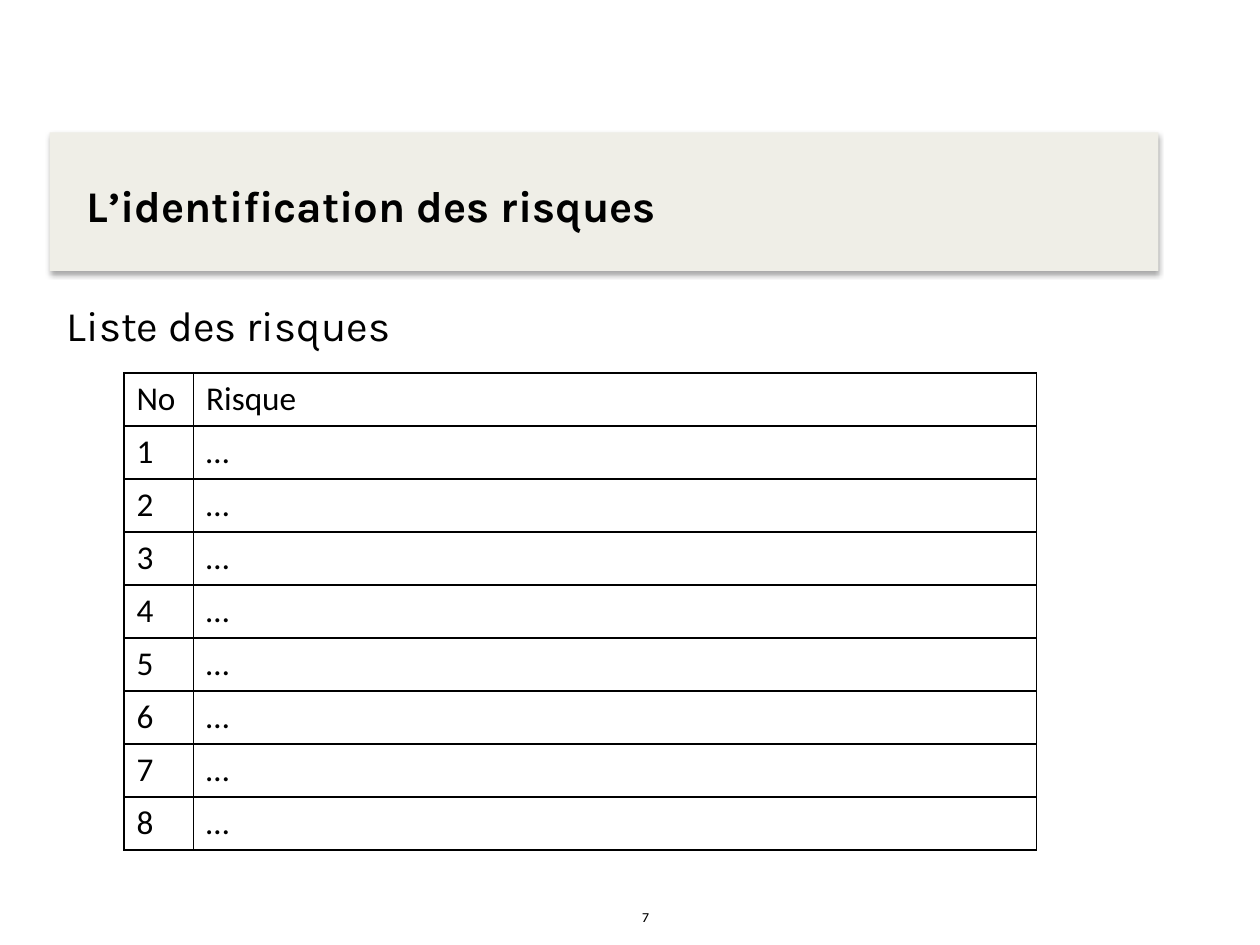
from dataclasses import dataclass

from lxml.etree import SubElement
from pptx import Presentation
from pptx.dml.color import RGBColor
from pptx.enum.shapes import MSO_SHAPE
from pptx.enum.text import MSO_ANCHOR, MSO_AUTO_SIZE, PP_ALIGN
from pptx.oxml import parse_xml
from pptx.oxml.ns import nsdecls, qn
from pptx.util import Pt


@dataclass(frozen=True)
class Theme:
    ink: str = "000000"
    paper: str = "FFFFFF"
    band: str = "EFEEE7"
    text_font: str = "Karla"
    table_font: str = "Calibri"
    title_size: float = 25
    body_size: float = 24
    table_size: float = 19
    number_size: float = 8
    border: float = 1
    hanging: float = 27


class SlideBuilder:
    def __init__(self, page, theme):
        self.page = page
        self.theme = theme

    def style(self, paragraph, font_name, size, bold=False):
        paragraph.alignment = PP_ALIGN.LEFT
        paragraph.space_before = Pt(0)
        for span in paragraph.runs:
            span.font.name = font_name
            span.font.size = Pt(size)
            span.font.bold = bold
            span.font.color.rgb = RGBColor.from_string(self.theme.ink)

    def place(self, shape, left, top, width, height):
        shape.left, shape.top = Pt(left), Pt(top)
        shape.width, shape.height = Pt(width), Pt(height)

    def band(self, left, top, width, height):
        shape = self.page.shapes.add_shape(
            MSO_SHAPE.RECTANGLE, Pt(left), Pt(top), Pt(width), Pt(height))
        shape.fill.solid()
        shape.fill.fore_color.rgb = RGBColor.from_string(self.theme.band)
        shape.line.fill.background()
        shape._element.spPr.append(parse_xml(
            f'<a:effectLst {nsdecls("a")}>'
            f'<a:outerShdw blurRad="{Pt(3.1)}" dist="{Pt(1.8)}" dir="5400000" rotWithShape="0">'
            f'<a:srgbClr val="{self.theme.ink}"><a:alpha val="35000"/></a:srgbClr>'
            '</a:outerShdw></a:effectLst>'))
        # Behind the placeholders
        self.page.shapes._spTree.insert(2, shape._element)

    def placeholder(self, shape, text, frame, size, anchor, bold=False):
        self.place(shape, *frame)
        text_frame = shape.text_frame
        text_frame.text = text
        text_frame.word_wrap = True
        text_frame.auto_size = MSO_AUTO_SIZE.NONE
        text_frame.vertical_anchor = anchor
        paragraph = text_frame.paragraphs[0]
        properties = paragraph._p.get_or_add_pPr()
        properties.set("marL", str(Pt(self.theme.hanging)))
        properties.set("indent", str(-Pt(self.theme.hanging)))
        SubElement(properties, qn("a:buNone"))
        self.style(paragraph, self.theme.text_font, size, bold)

    def border(self, cell):
        properties = cell._tc.get_or_add_tcPr()
        for position, side in enumerate(("lnL", "lnR", "lnT", "lnB")):
            properties.insert(position, parse_xml(
                f'<a:{side} {nsdecls("a")} w="{Pt(self.theme.border)}"><a:solidFill>'
                f'<a:srgbClr val="{self.theme.ink}"/></a:solidFill></a:{side}>'))

    def table(self, rows, left, top, column_widths, row_height):
        table = self.page.shapes.add_table(
            len(rows), len(column_widths), Pt(left), Pt(top),
            Pt(sum(column_widths)), Pt(row_height * len(rows))).table
        for column, width in zip(table.columns, column_widths):
            column.width = Pt(width)
        for row, texts in zip(table.rows, rows):
            row.height = Pt(row_height)
            for cell, text in zip(row.cells, texts):
                cell.text_frame.text = text
                cell.vertical_anchor = MSO_ANCHOR.BOTTOM
                cell.fill.solid()
                cell.fill.fore_color.rgb = RGBColor.from_string(self.theme.paper)
                self.border(cell)
                self.style(cell.text_frame.paragraphs[0],
                           self.theme.table_font, self.theme.table_size)

    def page_number(self, text, left, top, width, height):
        box = self.page.shapes.add_textbox(Pt(left), Pt(top), Pt(width), Pt(height))
        box.text_frame.word_wrap = True
        box.text_frame.text = text
        self.style(box.text_frame.paragraphs[0],
                   self.theme.text_font, self.theme.number_size)


def main():
    deck = Presentation()
    deck.slide_width, deck.slide_height = Pt(720), Pt(540)
    page = deck.slides.add_slide(deck.slide_layouts[1])
    theme = Theme()
    builder = SlideBuilder(page, theme)

    # Title on its band
    builder.band(28.4, 75.6, 633.6, 79.2)
    builder.placeholder(page.shapes.title, "L’identification des risques",
                        (42.5, 88.6, 607, 56.9), theme.title_size,
                        MSO_ANCHOR.MIDDLE, bold=True)

    # Body heading
    builder.placeholder(page.placeholders[1], "Liste des risques",
                        (31, 167.8, 640.8, 317.5), theme.body_size, MSO_ANCHOR.TOP)

    # Risk list
    rows = [("No", "Risque")] + [(str(number), "…") for number in range(1, 9)]
    builder.table(rows, 70.8, 213.2, (39.8, 481.8), 30.2)

    # Page number
    builder.page_number("7", 360, 515.5, 235.4, 17.3)

    deck.save("out.pptx")


if __name__ == "__main__":
    main()
